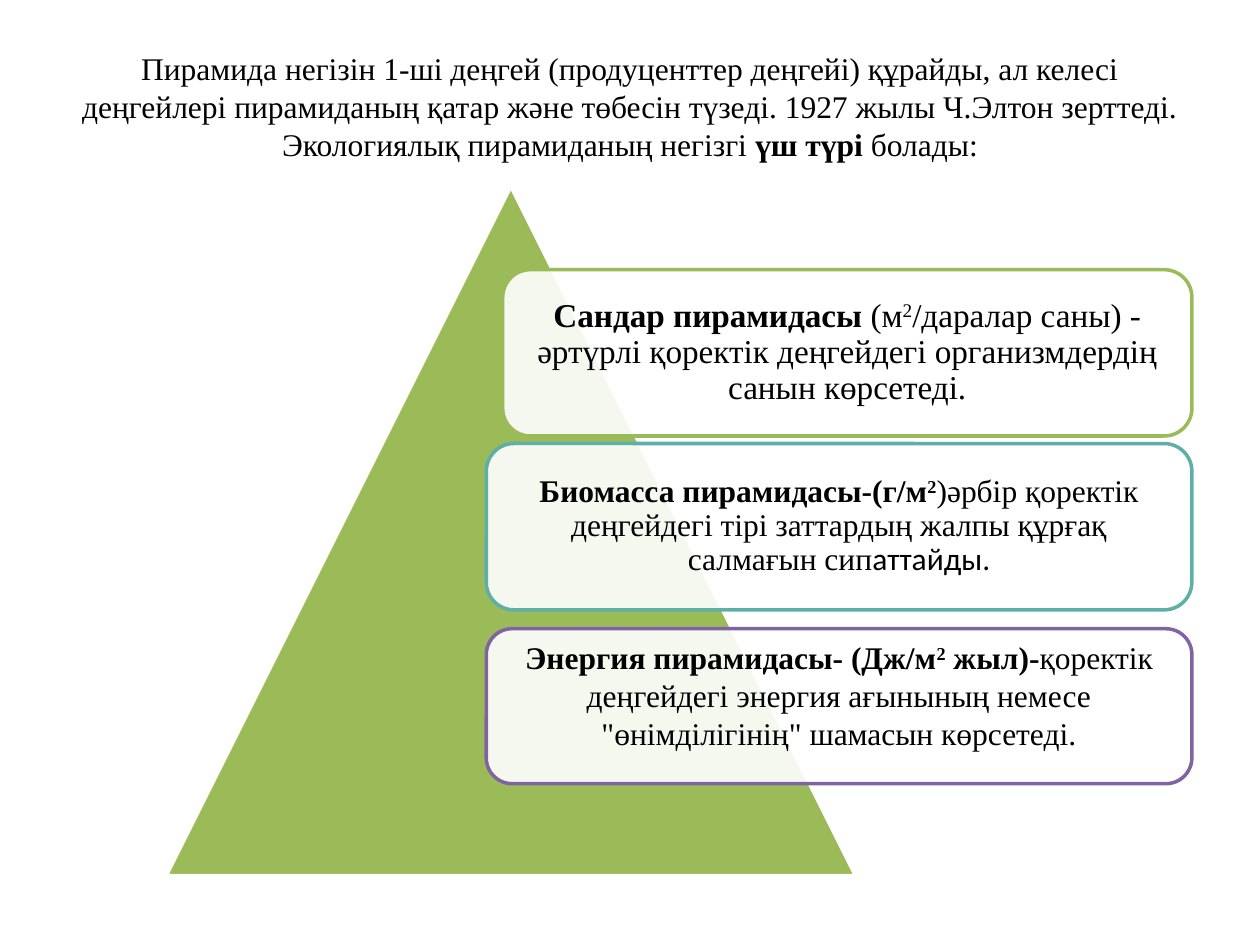
from pptx import Presentation
from pptx.dml.color import RGBColor
from pptx.enum.shapes import MSO_SHAPE
from pptx.enum.text import MSO_ANCHOR, MSO_AUTO_SIZE, PP_ALIGN
from pptx.oxml.ns import qn
from pptx.util import Inches, Pt
from lxml.etree import SubElement

SERIF = "Times New Roman"
GREEN, TEAL, PURPLE = "9BBB59", "5EAFA6", "8064A2"

TITLE = [
    ("Пирамида негізін 1-ші деңгей (продуценттер деңгейі) құрайды, ал келесі "
     "деңгейлері пирамиданың қатар және төбесін түзеді. 1927 жылы Ч.Элтон "
     "зерттеді. Экологиялық пирамиданың негізгі ", ""),
    ("үш түрі ", "b"),
    ("болады:", ""),
]
NUMBERS = [
    ("Сандар пирамидасы ", "b"), ("(м", ""), ("2", "^"),
    ("/даралар саны) - әртүрлі қоректік деңгейдегі организмдердің санын "
     "көрсетеді.", ""),
]
MASS = [
    ("Биомасса пирамидасы-(г/м", "b"), ("2", "b^"),
    (")әрбір қоректік деңгейдегі тірі заттардың жалпы құрғақ салмағын сип", ""),
    ("аттайды.", "c"),
]
ENERGY = [
    ("Энергия пирамидасы- (Дж/м", "b"), ("2", "b^"), (" жыл)-", "b"),
    ("қоректік деңгейдегі энергия ағынының немесе \"өнімділігінің\" шамасын "
     "көрсетеді.", ""),
]


def color(code):
    return RGBColor.from_string(code)


def write(frame, parts, size, gap=None):
    """Fill one centred paragraph; marks: b bold, ^ raised, c Calibri."""
    frame.word_wrap = True
    frame.auto_size = MSO_AUTO_SIZE.NONE
    frame.vertical_anchor = MSO_ANCHOR.MIDDLE
    para = frame.paragraphs[0]
    para.alignment = PP_ALIGN.CENTER
    if gap:
        para.line_spacing = gap
    for text, marks in parts:
        run = para.add_run()
        run.text = text
        font = run.font
        font.size = Pt(size)
        font.name = "Calibri" if "c" in marks else SERIF
        font.bold = "b" in marks
        font.color.rgb = color("000000")
        if "^" in marks:
            run._r.get_or_add_rPr().set("baseline", "30000")


def add_form(slide, kind, box, fill, line):
    form = slide.shapes.add_shape(kind, *map(Inches, box))
    form.shadow.inherit = False
    form.fill.solid()
    form.fill.fore_color.rgb = color(fill)
    form.line.color.rgb = color(line)
    form.line.width = Pt(2)
    return form


def add_title(slide, box):
    title = slide.shapes.title
    title.left, title.top, title.width, title.height = map(Inches, box)
    title.text_frame.margin_bottom = Inches(0.22)
    write(title.text_frame, TITLE, 18)


def add_card(slide, box, edge, parts, size=18, gap=0.9, lift=0):
    """Add a translucent card; lift is extra room below its text."""
    card = add_form(slide, MSO_SHAPE.ROUNDED_RECTANGLE, box, "FFFFFF", edge)
    tint = card.fill._xPr.find(qn("a:solidFill"))[0]
    SubElement(tint, qn("a:alpha")).set("val", "90000")
    frame = card.text_frame
    frame.margin_left = frame.margin_right = frame.margin_top = Inches(0.07)
    frame.margin_bottom = Inches(0.07 + lift)
    write(frame, parts, size, gap)


def add_pyramid(slide, box):
    left, top, side, _ = box
    add_form(slide, MSO_SHAPE.ISOSCELES_TRIANGLE, box, GREEN, "FFFFFF")
    right = left + 8.14
    wide = 5.6
    add_card(slide, (right - side, top + 0.66, side, 1.32), GREEN, NUMBERS, 19)
    add_card(slide, (right - wide, top + 2.04, wide, 1.32), TEAL, MASS)
    add_card(slide, (right - wide, top + 3.51, wide, 1.23), PURPLE, ENERGY,
             gap=None, lift=0.18)


def main():
    deck = Presentation()
    deck.slide_width, deck.slide_height = Inches(10), Inches(7.5)
    slide = deck.slides.add_slide(deck.slide_layouts[5])
    add_title(slide, (0.5, 0.3, 9, 1.25))
    add_pyramid(slide, (1.32, 1.48, 5.47, 5.47))
    deck.save("out.pptx")


if __name__ == "__main__":
    main()
